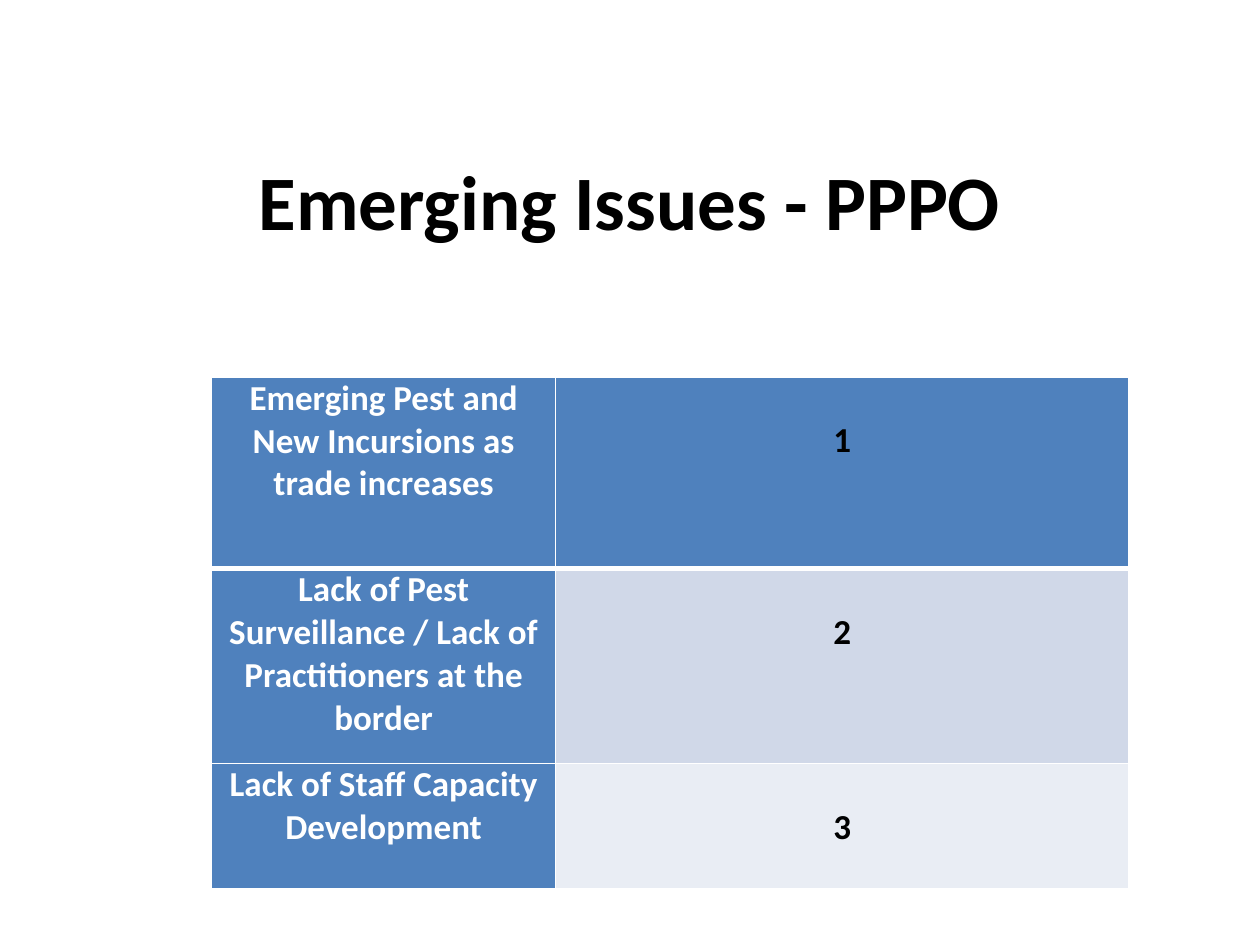
from lxml import etree
from pptx import Presentation
from pptx import util as u
from pptx.dml.color import RGBColor
from pptx.enum import text
from pptx.oxml import ns

FONT = "Calibri"
BLACK, WHITE, BLUE = "000000", "FFFFFF", "4F81BD"
ISSUES = [
    ("Emerging Pest and New Incursions as trade increases", BLUE, 1.52),
    ("Lack of Pest Surveillance / Lack of Practitioners at the border", "D0D8E8", 1.55),
    ("Lack of Staff Capacity Development", "E9EDF4", 0.99),
]


def color(value):
    """Turn a hex string into a colour."""
    return RGBColor.from_string(value)


def write(frame, words, size=20, ink=BLACK, bold=True):
    """Write one centred paragraph in a text frame."""
    para = frame.paragraphs[0]
    para.alignment = text.PP_ALIGN.CENTER
    span = para.add_run()
    span.text = words
    span.font.name = FONT
    span.font.size = u.Pt(size)
    span.font.bold = bold
    span.font.color.rgb = color(ink)


def add_border(cell, side, width):
    """Add a solid white line to one side of a table cell."""
    properties = cell._tc.get_or_add_tcPr()
    line = etree.SubElement(properties, ns.qn(f"a:ln{side}"), w=str(u.Pt(width)))
    fill = etree.SubElement(line, ns.qn("a:solidFill"))
    etree.SubElement(fill, ns.qn("a:srgbClr"), val=WHITE)


class IssueSlide:
    """Hold the page and add its title and ranking table."""

    def __init__(self, deck):
        self.page = deck.slides.add_slide(deck.slide_layouts[5])
        self.page.background.fill.solid()
        self.page.background.fill.fore_color.rgb = color(WHITE)

    def add_title(self, words, left, top, width, height):
        """Place the title placeholder and fill it."""
        box = self.page.shapes.title
        box.left, box.top = u.Inches(left), u.Inches(top)
        box.width, box.height = u.Inches(width), u.Inches(height)
        box.text_frame.vertical_anchor = text.MSO_ANCHOR.MIDDLE
        write(box.text_frame, words, size=44)

    def fill_cell(self, cell, words, fill, ink, borders, top=0):
        """Style one table cell and write its text."""
        for side, width in borders.items():
            add_border(cell, side, width)
        cell.fill.solid()
        cell.fill.fore_color.rgb = color(fill)
        cell.margin_left = cell.margin_right = u.Inches(0.07)
        cell.margin_top, cell.margin_bottom = u.Inches(top), 0
        write(cell.text_frame, words, ink=ink)

    def add_ranking(self, issues, left, top, widths):
        """Add the table of issues with their ranks."""
        height = sum(issue[2] for issue in issues)
        table = self.page.shapes.add_table(
            len(issues), len(widths), u.Inches(left), u.Inches(top),
            u.Inches(sum(widths)), u.Inches(height)).table
        table.horz_banding = False
        for column, width in zip(table.columns, widths):
            column.width = u.Inches(width)
        for row, (issue, fill, height) in enumerate(issues):
            table.rows[row].height = u.Inches(height)
            borders = {"L": 1, "R": 1, "T": 3 if row == 1 else 1, "B": 3 if row == 0 else 1}
            self.fill_cell(table.cell(row, 0), issue, BLUE, WHITE, borders)
            self.fill_cell(table.cell(row, 1), str(row + 1), fill, BLACK, borders, top=0.34)


def main():
    """Build and save the deck."""
    deck = Presentation()
    deck.slide_width, deck.slide_height = u.Inches(10), u.Inches(7.5)
    slide = IssueSlide(deck)
    slide.add_title("Emerging Issues - PPPO", 0.5, 0.96, 9, 1.25)
    slide.add_ranking(ISSUES, 1.68, 2.99, (2.73, 4.55))
    deck.save("out.pptx")


if __name__ == "__main__":
    main()
